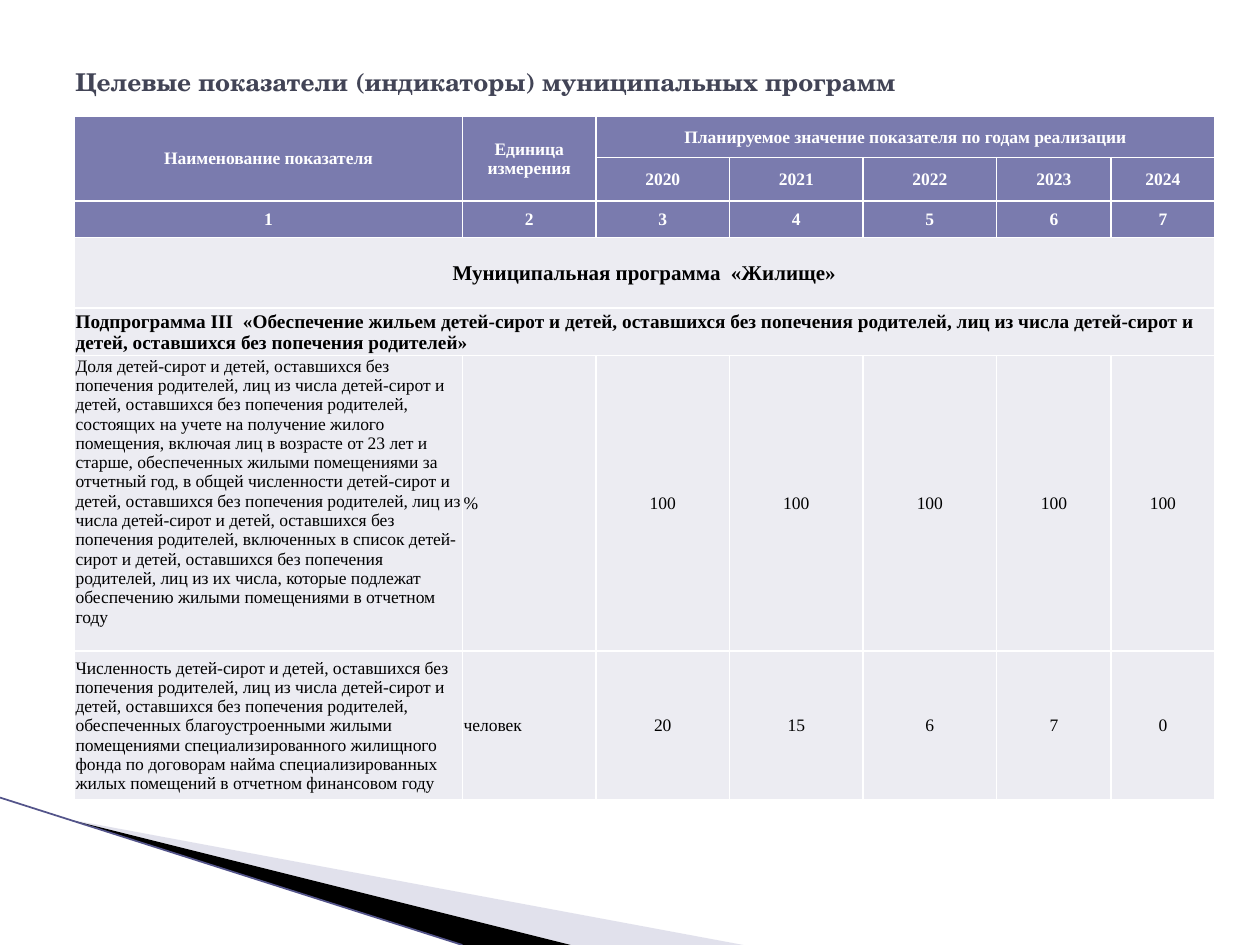
from dataclasses import dataclass

from lxml.etree import SubElement
from pptx import Presentation
from pptx.dml.color import RGBColor
from pptx.enum.shapes import MSO_CONNECTOR
from pptx.enum.text import MSO_ANCHOR, PP_ALIGN
from pptx.oxml.ns import qn
from pptx.util import Inches, Pt


@dataclass(frozen=True)
class Theme:
    title: str = "424456"
    head: str = "7A7BAE"
    body: str = "ECECF2"
    white: str = "FFFFFF"
    black: str = "000000"
    wedge: str = "B6B6D1"
    edge: str = "53548A"
    serif: str = "TeX Gyre Schola"
    roman: str = "Times New Roman"
    big: int = 14
    mid: int = 12
    sub: int = 11
    small: int = 10


THEME = Theme()
COLS = [3.08, 1.06, 1.06, 1.06, 1.06, 0.91, 0.82]
ROWS = [0.33, 0.32, 0.29, 0.56, 0.37, 2.31, 1.08]
YEARS = ["2020", "2021", "2022", "2023", "2024"]
GOALS = [
    ("Доля детей-сирот и детей, оставшихся без попечения родителей, лиц из "
     "числа детей-сирот и детей, оставшихся без попечения родителей, состоящих "
     "на учете на получение жилого помещения, включая лиц в возрасте от 23 лет "
     "и старше, обеспеченных жилыми помещениями за отчетный год, в общей "
     "численности детей-сирот и детей, оставшихся без попечения родителей, лиц "
     "из числа детей-сирот и детей, оставшихся без попечения родителей, "
     "включенных в список детей-сирот и детей, оставшихся без попечения "
     "родителей, лиц из их числа, которые подлежат обеспечению жилыми "
     "помещениями в отчетном году",
     "%", [100] * 5, MSO_ANCHOR.TOP),
    ("Численность детей-сирот и детей, оставшихся без попечения родителей, лиц "
     "из числа детей-сирот и детей, оставшихся без попечения родителей, "
     "обеспеченных благоустроенными жилыми помещениями специализированного "
     "жилищного фонда по договорам найма специализированных жилых помещений в "
     "отчетном финансовом году",
     "человек", [20, 15, 6, 7, 0], MSO_ANCHOR.MIDDLE),
]


def rgb(color):
    return RGBColor.from_string(color)


def write(frame, text, size=THEME.small, font=THEME.roman, color=THEME.black,
          bold=False, align=PP_ALIGN.LEFT):
    frame.word_wrap = True
    para = frame.paragraphs[0]
    para.alignment = align
    run = para.add_run()
    run.text = text
    run.font.size = Pt(size)
    run.font.name = font
    run.font.bold = bold
    run.font.color.rgb = rgb(color)


def wedge(slide, points, color, alpha=None):
    first, *rest = [(Inches(x), Inches(y)) for x, y in points]
    path = slide.shapes.build_freeform(*first)
    path.add_line_segments(rest)
    shape = path.convert_to_shape()
    shape.shadow.inherit = False
    shape.line.fill.background()
    shape.fill.solid()
    shape.fill.fore_color.rgb = rgb(color)
    if alpha:
        tint = shape.fill._xPr.find(".//" + qn("a:srgbClr"))
        SubElement(tint, qn("a:alpha"), val=str(alpha * 1000))


def corner(slide, left, top, width, height):
    """Wedges and edge line in the lower left corner."""
    base = top + height
    tip = (left + 0.53, top + 0.17)
    wedge(slide, [tip, (left + width, base), (left + 4.53, base)],
          THEME.wedge, alpha=40)
    wedge(slide, [tip, (left + 4.53, base), (left + 3.67, base)], THEME.black)
    line = slide.shapes.add_connector(
        MSO_CONNECTOR.STRAIGHT, Inches(left), Inches(top),
        Inches(left + 3.67), Inches(base))
    line.line.color.rgb = rgb(THEME.edge)
    line.line.width = Pt(1)
    SubElement(line._element.spPr, qn("a:effectLst"))


def title(slide, left, top, width, height):
    box = slide.shapes.add_textbox(*map(Inches, (left, top, width, height)))
    box.text_frame.vertical_anchor = MSO_ANCHOR.MIDDLE
    write(box.text_frame, "Целевые показатели (индикаторы) муниципальных программ",
          size=THEME.big, font=THEME.serif, color=THEME.title, bold=True)


def dress(cell, color):
    """Margins, white borders and fill of one cell."""
    cell.margin_left = cell.margin_right = cell.margin_top = Inches(0.01)
    cell.margin_bottom = 0
    cell.vertical_anchor = MSO_ANCHOR.MIDDLE
    props = cell._tc.get_or_add_tcPr()
    for side in ("lnL", "lnR", "lnT", "lnB"):
        line = SubElement(props, qn(f"a:{side}"), w=str(Pt(1)))
        fill = SubElement(line, qn("a:solidFill"))
        SubElement(fill, qn("a:srgbClr"), val=THEME.white)
    cell.fill.solid()
    cell.fill.fore_color.rgb = rgb(color)


def grid(slide, left, top, width, height):
    """Table of goals by year."""
    table = slide.shapes.add_table(
        len(ROWS), len(COLS),
        *map(Inches, (left, top, width, height))).table
    for col, size in zip(table.columns, COLS):
        col.width = Inches(size)
    for index, (row, size) in enumerate(zip(table.rows, ROWS)):
        row.height = Inches(size)
        for cell in row.cells:
            dress(cell, THEME.head if index < 3 else THEME.body)

    def put(row, col, text, end=None, **style):
        cell = table.cell(row, col)
        if end:
            cell.merge(table.cell(*end))
        write(cell.text_frame, text, **style)

    # Header rows
    head = dict(color=THEME.white, bold=True, align=PP_ALIGN.CENTER)
    put(0, 0, "Наименование показателя", end=(1, 0), **head)
    put(0, 1, "Единица измерения", end=(1, 1), **head)
    put(0, 2, "Планируемое значение показателя по годам реализации",
        end=(0, 6), **head)
    for col, year in enumerate(YEARS, 2):
        put(1, col, year, **head)
    for col in range(len(COLS)):
        put(2, col, str(col + 1), **head)

    # Programme rows
    put(3, 0, "Муниципальная программа  «Жилище»", end=(3, 6),
        size=THEME.mid, bold=True, align=PP_ALIGN.CENTER)
    put(4, 0, "Подпрограмма III  «Обеспечение жильем детей-сирот и детей, "
        "оставшихся без попечения родителей, лиц из числа детей-сирот и детей, "
        "оставшихся без попечения родителей»", end=(4, 6),
        size=THEME.sub, bold=True)

    # Goal rows
    for row, (name, unit, values, anchor) in enumerate(GOALS, 5):
        put(row, 0, name)
        table.cell(row, 0).vertical_anchor = anchor
        put(row, 1, unit, align=PP_ALIGN.JUSTIFY)
        for col, value in enumerate(values, 2):
            put(row, col, str(value), align=PP_ALIGN.CENTER)


def main():
    deck = Presentation()
    deck.slide_width, deck.slide_height = Inches(10), Inches(7.5)
    slide = deck.slides.add_slide(deck.slide_layouts[6])
    corner(slide, 0, 6.33, 5.9, 1.17)
    title(slide, 0.5, 0.3, 9, 0.69)
    grid(slide, 0.59, 0.92, sum(COLS), sum(ROWS))
    deck.save("out.pptx")


if __name__ == "__main__":
    main()
